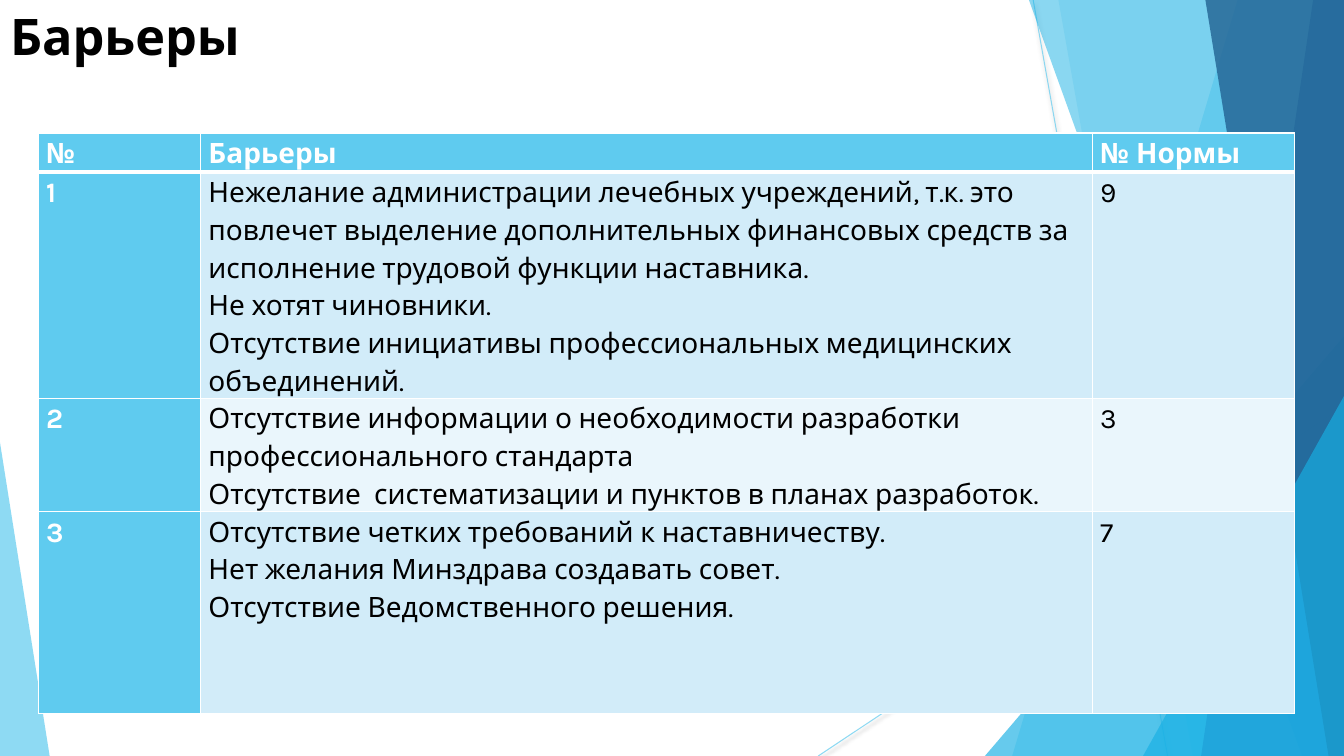
"""Build the slide about barriers: a faceted backdrop, a title and a table."""
from lxml import etree
from pptx import Presentation
from pptx import util as u
from pptx.dml.color import RGBColor
from pptx.enum import shapes, text
from pptx.oxml import ns

WHITE = RGBColor(0xFF, 0xFF, 0xFF)
BLACK = RGBColor(0, 0, 0)
SKY = RGBColor(0x5F, 0xCB, 0xEF)
CYAN = RGBColor(0x17, 0xB0, 0xE4)
BLUE = RGBColor(0x2E, 0x83, 0xC3)
NAVY = RGBColor(0x22, 0x62, 0x92)
BAND = RGBColor(0xD2, 0xEC, 0xF9)
PALE = RGBColor(0xEA, 0xF6, 0xFC)

WIDTH, HEIGHT = 960, 540

ROWS = [
    ("№", ["Барьеры"], "№ Нормы"),
    ("1", ["Нежелание администрации лечебных учреждений, т.к. это повлечет "
           "выделение дополнительных финансовых средств за исполнение трудовой "
           "функции наставника.",
           "Не хотят чиновники.",
           "Отсутствие инициативы профессиональных медицинских объединений."], "9"),
    ("2", ["Отсутствие информации о необходимости разработки "
           "профессионального стандарта",
           "Отсутствие  систематизации и пунктов в планах разработок."], "3"),
    ("3", ["Отсутствие четких требований к наставничеству.",
           "Нет желания Минздрава создавать совет.",
           "Отсутствие Ведомственного решения."], "7"),
]


def add_child(parent, tag, **attributes):
    return etree.SubElement(parent, ns.qn(tag), {k: str(v) for k, v in attributes.items()})


class SlideBuilder:
    font = "Karla"

    def __init__(self, slide):
        self.slide = slide

    def set_alpha(self, element, percent):
        color = element.find(".//" + ns.qn("a:srgbClr"))
        add_child(color, "a:alpha", val=percent * 1000)

    def paint(self, shape, color, opacity):
        shape.shadow.inherit = False
        shape.fill.solid()
        shape.fill.fore_color.rgb = color
        shape.line.fill.background()
        self.set_alpha(shape._element.spPr, opacity)

    def line(self, x1, y1, x2, y2):
        line = self.slide.shapes.add_connector(
            shapes.MSO_CONNECTOR.STRAIGHT, u.Pt(x1), u.Pt(y1), u.Pt(x2), u.Pt(y2))
        line.line.color.rgb = SKY
        line.line.width = u.Pt(0.75)
        properties = line._element.spPr
        self.set_alpha(properties, 70)
        effects = add_child(properties, "a:effectLst")
        shadow = add_child(effects, "a:outerShdw", blurRad=u.Pt(3.1), dist=u.Pt(1.6),
                           dir=5400000, rotWithShape=0)
        color = add_child(shadow, "a:srgbClr", val=BLACK)
        add_child(color, "a:alpha", val=38000)

    def facet(self, top_x, bottom_x, color, opacity):
        builder = self.slide.shapes.build_freeform(top_x, 0, scale=u.Pt(1))
        builder.add_line_segments([(WIDTH, 0), (WIDTH, HEIGHT), (bottom_x, HEIGHT)])
        self.paint(builder.convert_to_shape(), color, opacity)

    def corner(self, left, width, height, apex, color, opacity):
        triangle = self.slide.shapes.add_shape(
            shapes.MSO_SHAPE.ISOSCELES_TRIANGLE, u.Pt(left), u.Pt(HEIGHT - height),
            u.Pt(width), u.Pt(height))
        triangle.adjustments[0] = apex
        self.paint(triangle, color, opacity)

    def style_text(self, paragraph, size, color, bold):
        for run in paragraph.runs:
            run.font.name = self.font
            run.font.size = u.Pt(size)
            run.font.bold = bold
            run.font.color.rgb = color

    def title(self, wording, left, top, width, height):
        title = self.slide.shapes.title
        title.left, title.top = u.Pt(left), u.Pt(top)
        title.width, title.height = u.Pt(width), u.Pt(height)
        frame = title.text_frame
        frame.text = wording
        frame.vertical_anchor = text.MSO_ANCHOR.TOP
        paragraph = frame.paragraphs[0]
        paragraph.alignment = text.PP_ALIGN.LEFT
        self.style_text(paragraph, 36, BLACK, True)

    def cell(self, cell, wording, fill, color, bold, top_border, bottom_border):
        cell.margin_left = cell.margin_right = u.Pt(5.4)
        cell.margin_top = cell.margin_bottom = 0
        cell.text_frame.text = wording
        for paragraph in cell.text_frame.paragraphs:
            paragraph.line_spacing = 1.15
            self.style_text(paragraph, 20, color, bold)
        properties = cell._tc.get_or_add_tcPr()
        borders = {"a:lnL": 1, "a:lnR": 1, "a:lnT": top_border, "a:lnB": bottom_border}
        for tag, width in borders.items():
            border = add_child(properties, tag, w=u.Pt(width))
            add_child(add_child(border, "a:solidFill"), "a:srgbClr", val=WHITE)
        cell.fill.solid()
        cell.fill.fore_color.rgb = fill

    def table(self, rows, left, top, widths, heights):
        table = self.slide.shapes.add_table(
            len(rows), len(widths), u.Pt(left), u.Pt(top),
            u.Pt(sum(widths)), u.Pt(sum(heights))).table
        for column, width in zip(table.columns, widths):
            column.width = u.Pt(width)
        for row, height in zip(table.rows, heights):
            row.height = u.Pt(height)
        for i, (number, barriers, norm) in enumerate(rows):
            for j, wording in enumerate((number, "\n".join(barriers), norm)):
                heading = i == 0 or j == 0
                fill = SKY if heading else BAND if i % 2 else PALE
                self.cell(table.cell(i, j), wording, fill, WHITE if heading else BLACK,
                          heading, 3 if i == 1 else 1, 3 if i == 0 else 1)


def main():
    presentation = Presentation()
    presentation.slide_width, presentation.slide_height = u.Pt(WIDTH), u.Pt(HEIGHT)
    slide = presentation.slides.add_slide(presentation.slide_layouts[5])
    builder = SlideBuilder(slide)

    builder.line(738, 0, 834, HEIGHT)
    builder.line(WIDTH, 290, 584.5, HEIGHT)
    builder.facet(884, 723, SKY, 36)
    builder.facet(756, 852, SKY, 20)
    builder.corner(703.5, 256.5, 300, 1, CYAN, 66)
    builder.facet(735, 929.5, CYAN, 50)
    builder.facet(938, 858, BLUE, 70)
    builder.facet(861, 949, NAVY, 80)
    builder.corner(816.5, 143.5, 257, 1, CYAN, 66)
    builder.corner(0, 35.5, 224, 0, SKY, 70)

    builder.title("Барьеры", 0, 0, 677, 104)
    builder.table(ROWS, 27.5, 95, [116, 637, 144], [28, 161, 81, 144])
    presentation.save("out.pptx")


if __name__ == "__main__":
    main()
